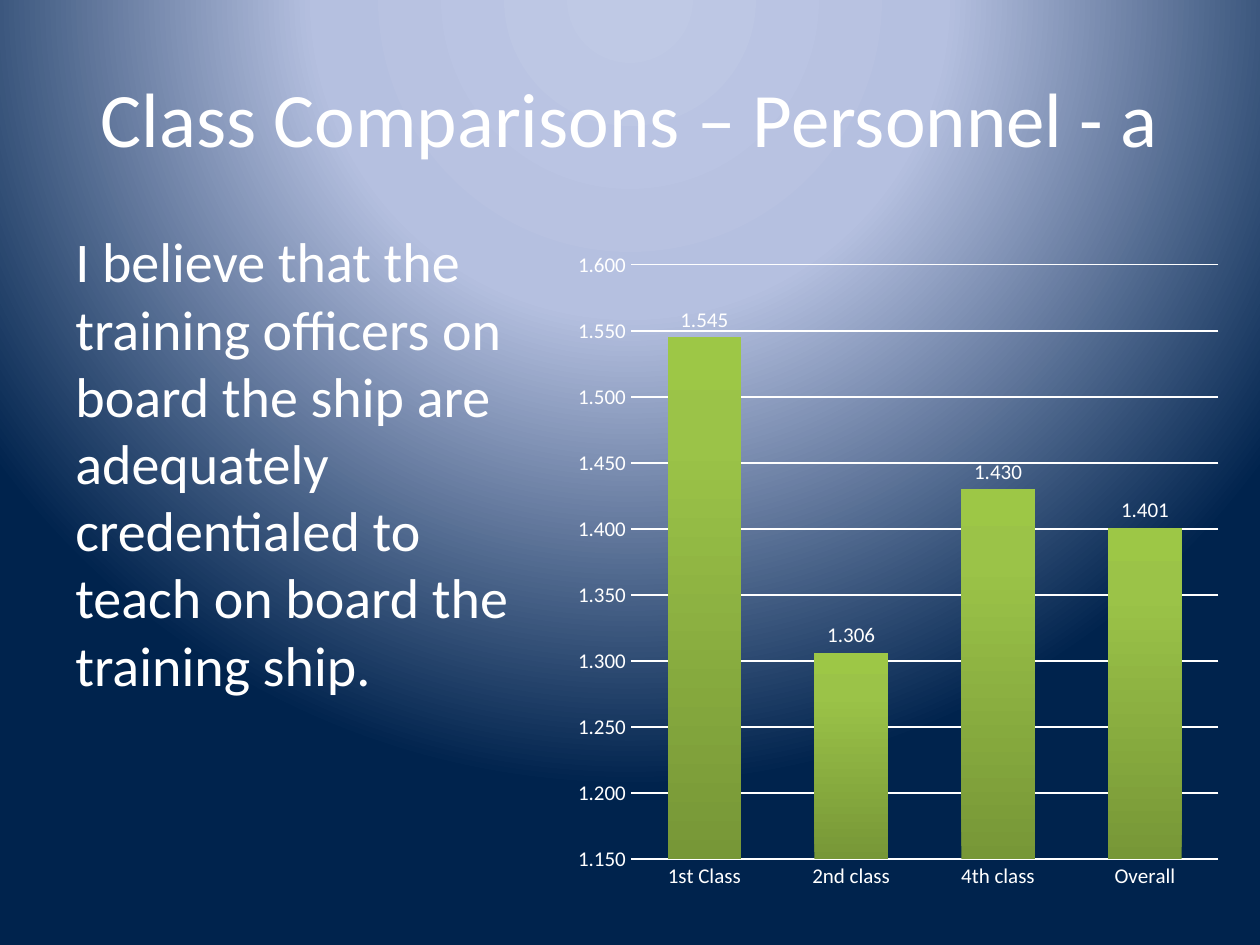
from dataclasses import dataclass

from pptx import Presentation
from pptx.chart.data import CategoryChartData as ChartData
from pptx.dml.color import RGBColor as RGB
from pptx.enum.chart import (XL_CHART_TYPE as ChartType, XL_LABEL_POSITION as LabelPos,
                             XL_TICK_MARK as Tick)
from pptx.enum.text import MSO_ANCHOR as Anchor, PP_ALIGN as Align
from pptx.oxml import parse_xml
from pptx.oxml.ns import nsdecls, qn
from pptx.util import Cm, Pt


@dataclass(frozen=True)
class Theme:
    font: str = "Calibri"
    text: str = "FFFFFF"
    title_pt: int = 44
    body_pt: int = 32
    chart_pt: int = 12
    backdrop: tuple = ((0, "BFC9E5"), (40, "B5C0E0"), (100, "00234D"))
    bars: tuple = ((0, "779737"), (80, "9BC348"), (100, "9DC746"))


THEME = Theme()
GLOW = ('<a:path path="circle"><a:fillToRect l="50000" t="-80000" '
        'r="50000" b="180000"/></a:path>')
UPWARD = '<a:lin ang="16200000" scaled="0"/>'
SCORES = {"1st Class": 1.545, "2nd class": 1.306, "4th class": 1.43, "Overall": 1.401}
PLOT_AREA = {"x": 0.147, "y": 0.034, "w": 0.818, "h": 0.885}


def apply(obj, values):
    for name, value in values.items():
        setattr(obj, name, value)


def style_font(font, size):
    apply(font, {"name": THEME.font, "size": Pt(size)})
    font.color.rgb = RGB.from_string(THEME.text)


def style_line(line, width):
    line.color.rgb = RGB.from_string(THEME.text)
    line.width = Pt(width)


def set_gradient(fill, root, parent, stops, direction):
    """Swap the solid fill under parent for a gradient."""
    fill.solid()
    solid = root.xpath(f".//{parent}/a:solidFill")[0]
    gs = "".join(f'<a:gs pos="{pos * 1000}"><a:srgbClr val="{color}"/></a:gs>'
                 for pos, color in stops)
    grad = parse_xml(f'<a:gradFill {nsdecls("a")} rotWithShape="1">'
                     f"<a:gsLst>{gs}</a:gsLst>{direction}</a:gradFill>")
    solid.getparent().replace(solid, grad)


def add_text(s, box, text, size, anchor, align):
    tf = s.shapes.add_textbox(*map(Cm, box)).text_frame
    apply(tf, {"word_wrap": True, "vertical_anchor": anchor})
    p = tf.paragraphs[0]
    p.alignment = align
    r = p.add_run()
    r.text = text
    style_font(r.font, size)


def set_plot_area(chart):
    area = chart._chartSpace.chart.plotArea
    for old in area.findall(qn("c:layout")):
        area.remove(old)
    modes = '<c:xMode val="edge"/><c:yMode val="edge"/>'
    sizes = "".join(f'<c:{k} val="{v}"/>' for k, v in PLOT_AREA.items())
    area.insert(0, parse_xml(
        f'<c:layout {nsdecls("c")}><c:manualLayout><c:layoutTarget val="inner"/>'
        f"{modes}{sizes}</c:manualLayout></c:layout>"))


def add_bar_chart(s, box):
    data = ChartData(number_format="0.000")
    data.categories = list(SCORES)
    data.add_series("Series 1", list(SCORES.values()))
    chart = s.shapes.add_chart(ChartType.COLUMN_CLUSTERED, *map(Cm, box), data).chart
    apply(chart, {"has_title": False, "has_legend": False})
    style_font(chart.font, THEME.chart_pt)
    set_plot_area(chart)

    # Axes
    cat, val = chart.category_axis, chart.value_axis
    for axis in (cat, val):
        apply(axis, {"major_tick_mark": Tick.NONE, "minor_tick_mark": Tick.NONE})
        style_font(axis.tick_labels.font, THEME.chart_pt)
    style_line(cat.format.line, 1)
    apply(val, {"minimum_scale": 1.15, "maximum_scale": 1.6, "major_unit": 0.05})
    apply(val.tick_labels, {"number_format": "0.000", "number_format_is_linked": False})
    val.format.line.fill.background()
    style_line(val.major_gridlines.format.line, 0.75)

    # Bars and their labels
    plot = chart.plots[0]
    apply(plot, {"gap_width": 100, "overlap": -24, "vary_by_categories": False})
    series = plot.series[0]
    set_gradient(series.format.fill, series._element, "c:spPr", THEME.bars, UPWARD)
    labels = series.data_labels
    apply(labels, {"show_value": True, "position": LabelPos.OUTSIDE_END,
                   "number_format": "0.000", "number_format_is_linked": False})
    style_font(labels.font, THEME.chart_pt)


def main():
    prs = Presentation()
    apply(prs, {"slide_width": Cm(25.4), "slide_height": Cm(19.05)})
    s = prs.slides.add_slide(prs.slide_layouts[6])
    set_gradient(s.background.fill, s.element, "p:bgPr", THEME.backdrop, GLOW)

    # Title and survey statement
    add_text(s, (1.27, 0.76, 22.86, 3.18), "Class Comparisons – Personnel - a",
             THEME.title_pt, Anchor.MIDDLE, Align.CENTER)
    add_text(s, (1.27, 4.45, 9.73, 12.57),
             "I believe that the training officers on board the ship are adequately "
             "credentialed to teach on board the training ship.",
             THEME.body_pt, Anchor.TOP, Align.LEFT)

    # Scores by class
    add_bar_chart(s, (10.59, 4.88, 14.48, 13.54))
    prs.save("out.pptx")


if __name__ == "__main__":
    main()
